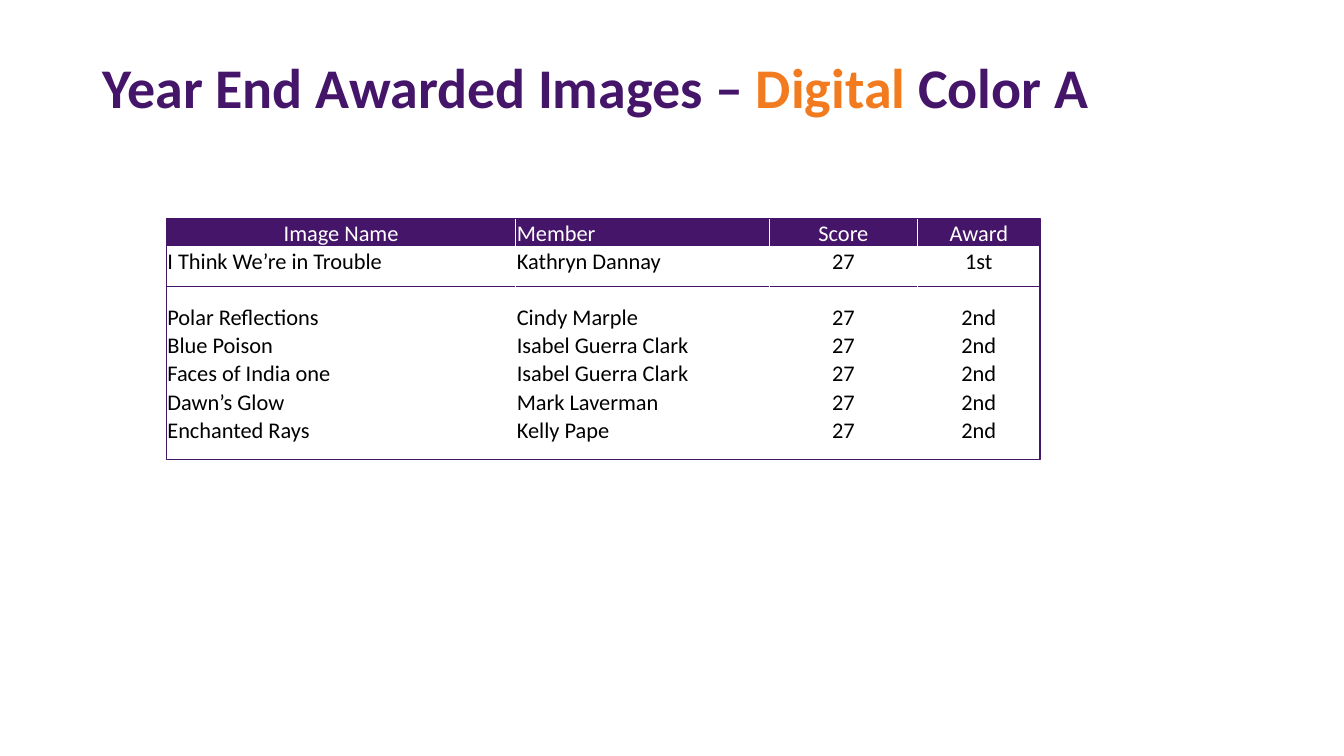
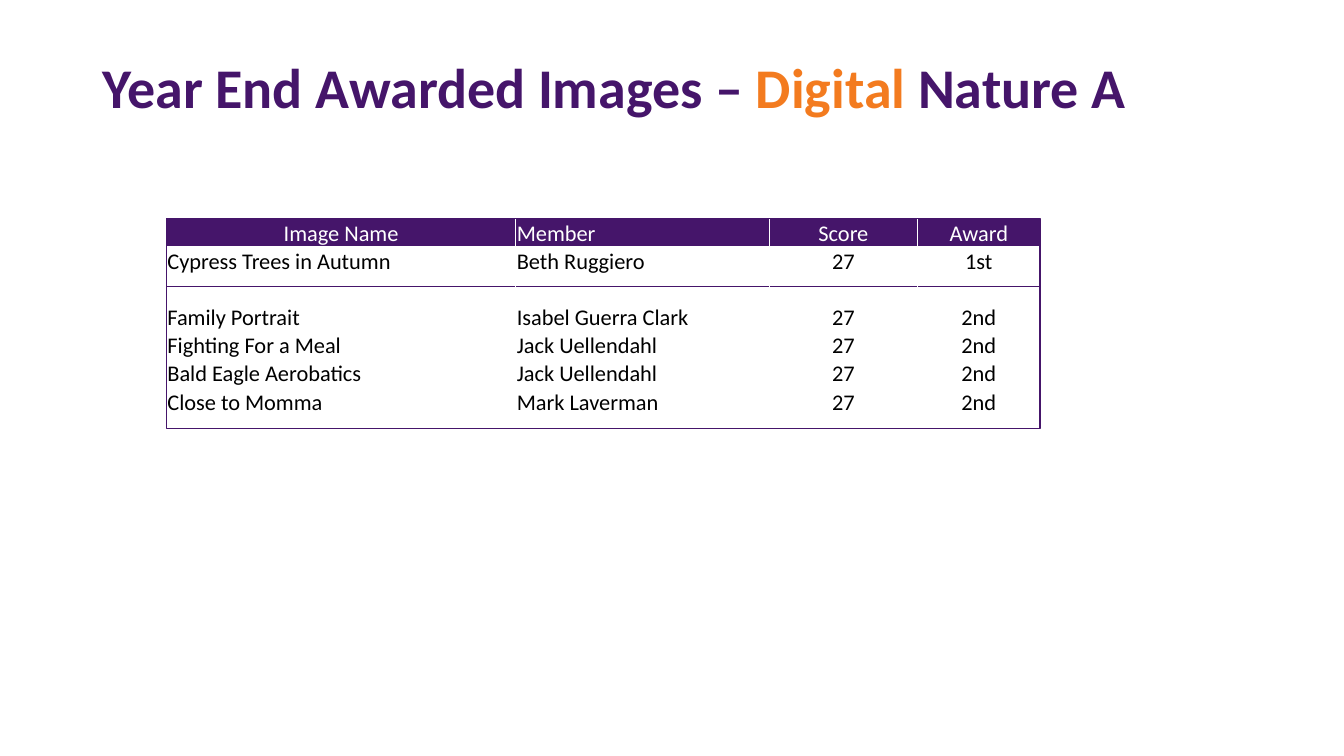
from lxml import etree
from pptx import Presentation, util as u
from pptx.dml.color import RGBColor
from pptx.enum import shapes, text
from pptx.oxml.ns import qn


class Theme:
    purple = RGBColor.from_string("45156A")
    orange = RGBColor.from_string("F37B1F")
    white = RGBColor.from_string("FFFFFF")
    black = RGBColor.from_string("000000")
    font = "Calibri"
    title_size = u.Pt(40)
    table_size = u.Pt(16)
    line = u.Pt(1)


presentation = Presentation()
presentation.slide_width, presentation.slide_height = u.Inches(13.33), u.Inches(7.5)


def place(left, top, width, height):
    """Turn percentages of the slide's width and height into lengths."""
    across, down = presentation.slide_width / 100, presentation.slide_height / 100
    return [u.Emu(round(share * side)) for share, side in
            zip((left, top, width, height), (across, down, across, down))]


def write(frame, *runs, size, bold=False, align=text.PP_ALIGN.LEFT, spacing=1.0):
    """Fill the first paragraph with (words, colour) runs."""
    paragraph = frame.paragraphs[0]
    paragraph.alignment, paragraph.line_spacing = align, spacing
    for words, colour in runs:
        run = paragraph.add_run()
        run.text = words
        run.font.name, run.font.size, run.font.bold = Theme.font, size, bold
        run.font.color.rgb = colour
    if not runs:  # an empty cell keeps the height of its type size
        etree.SubElement(paragraph._p, qn("a:endParaRPr"), sz=str(int(size.pt * 100)))


# Shared grid, in percent of the slide
TITLE = (6.9, 5.33, 86.27, 13.2)
TABLE_LEFT, TABLE_TOP, TABLE_WIDTH = 12.38, 28.93, 65
ROW_HEIGHT, DIVIDER_TOP = 3.73, 37.87
COLUMN_SHARES = (0.40, 0.29, 0.17, 0.14)
HEADER = ("Image Name", "Member", "Score", "Award")
CENTERED = {"Image Name", "Score", "Award"}

# Category, outline height in percent, winners from first place down
CATEGORIES = [
    ("Color A", 31.87, [
        ("I Think We’re in Trouble", "Kathryn Dannay"),
        ("Polar Reflections", "Cindy Marple"),
        ("Blue Poison", "Isabel Guerra Clark"),
        ("Faces of India one", "Isabel Guerra Clark"),
        ("Dawn’s Glow", "Mark Laverman"),
        ("Enchanted Rays", "Kelly Pape"),
    ]),
    ("Nature A", 27.73, [
        ("Cypress Trees in Autumn", "Beth Ruggiero"),
        ("Family Portrait", "Isabel Guerra Clark"),
        ("Fighting For a Meal", "Jack Uellendahl"),
        ("Bald Eagle Aerobatics", "Jack Uellendahl"),
        ("Close to Momma", "Mark Laverman"),
    ]),
]

for category, outline_height, winners in CATEGORIES:
    slide = presentation.slides.add_slide(presentation.slide_layouts[6])

    # Title
    title = slide.shapes.add_textbox(*place(*TITLE)).text_frame
    title.word_wrap, title.vertical_anchor = True, text.MSO_ANCHOR.MIDDLE
    write(title, ("Year End Awarded Images – ", Theme.purple), ("Digital", Theme.orange),
          (f" {category}", Theme.purple), size=Theme.title_size, bold=True, spacing=0.9)

    # Divider below first place
    left, top, width, _ = place(TABLE_LEFT, DIVIDER_TOP, TABLE_WIDTH, 0)
    divider = slide.shapes.add_connector(shapes.MSO_CONNECTOR.STRAIGHT,
                                         left, top, left + width, top)
    divider.line.color.rgb, divider.line.width = Theme.purple, Theme.line
    etree.SubElement(divider._element.spPr, qn("a:effectLst"))

    # Award table, with an empty row between first and second places
    first, *seconds = [(*winner, "27", "2nd" if rank else "1st")
                       for rank, winner in enumerate(winners)]
    rows = [HEADER, first, ("",) * len(HEADER), *seconds]
    box = place(TABLE_LEFT, TABLE_TOP, TABLE_WIDTH, ROW_HEIGHT * len(rows))
    table = slide.shapes.add_table(len(rows), len(HEADER), *box).table
    table.first_row = table.horz_banding = False
    for column, share in zip(table.columns, COLUMN_SHARES):
        column.width = u.Emu(round(box[2] * share))

    for row_index, row in enumerate(rows):
        for column_index, words in enumerate(row):
            cell = table.cell(row_index, column_index)
            heading = HEADER[column_index]
            cell.margin_left = cell.margin_right = cell.margin_top = u.Inches(0.01)
            cell.margin_bottom = 0
            middle = row_index > 2 and column_index < 2
            cell.vertical_anchor = text.MSO_ANCHOR.MIDDLE if middle else text.MSO_ANCHOR.BOTTOM
            centered = heading in CENTERED and (row_index == 0 or column_index > 0)
            colour = Theme.black if row_index else Theme.white
            write(cell.text_frame, *([(words, colour)] if words else []),
                  size=Theme.table_size,
                  align=text.PP_ALIGN.CENTER if centered else text.PP_ALIGN.LEFT)
            # Borders come before the fill in the cell's properties
            for side in ("a:lnL", "a:lnR", "a:lnT", "a:lnB"):
                border = etree.SubElement(cell._tc.get_or_add_tcPr(), qn(side),
                                          w=str(int(Theme.line)))
                fill = etree.SubElement(border, qn("a:solidFill"))
                etree.SubElement(fill, qn("a:srgbClr"), val=str(Theme.white))
            if row_index == 0:
                cell.fill.solid()
                cell.fill.fore_color.rgb = Theme.purple
            else:
                cell.fill.background()

    # Outline around the table
    outline = slide.shapes.add_shape(
        shapes.MSO_SHAPE.RECTANGLE,
        *place(TABLE_LEFT, TABLE_TOP, TABLE_WIDTH, outline_height))
    outline.shadow.inherit = False
    outline.fill.background()
    outline.line.color.rgb, outline.line.width = Theme.purple, Theme.line

presentation.save("out.pptx")
